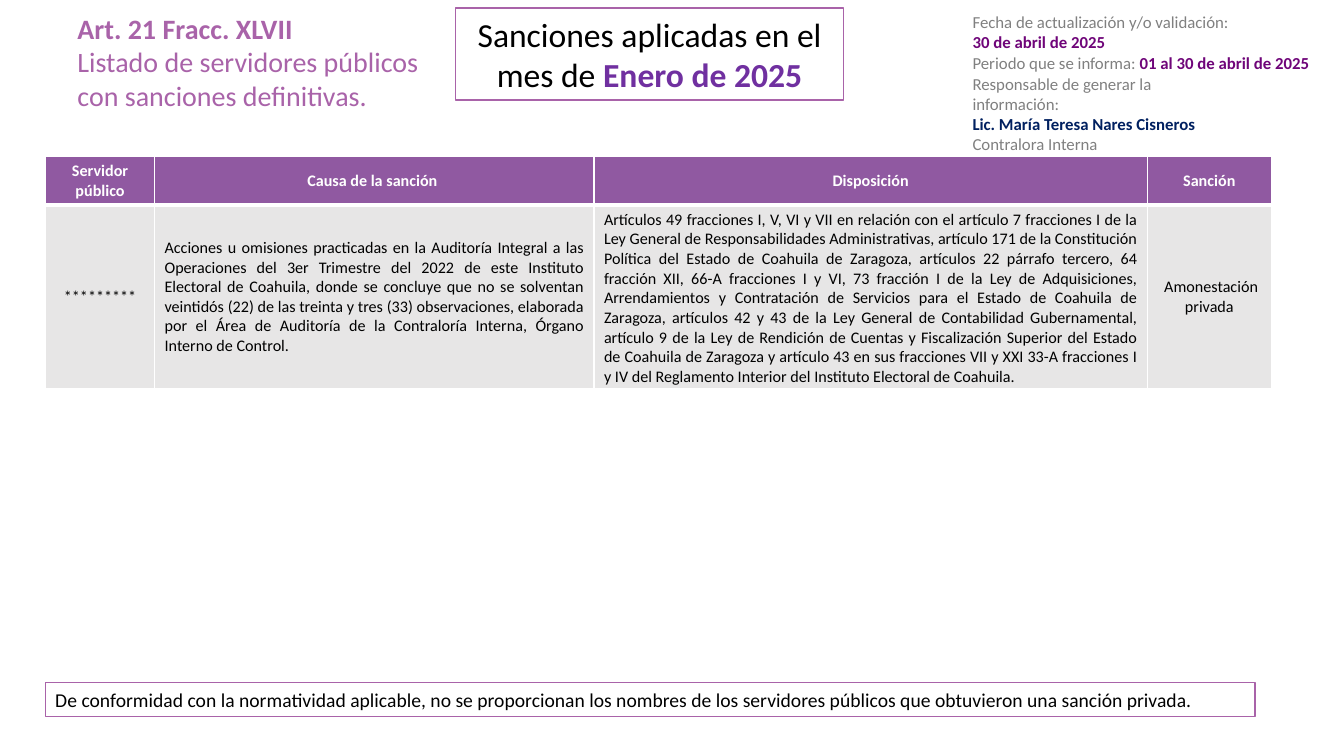
from dataclasses import dataclass

from lxml.etree import SubElement
from pptx import Presentation
from pptx.dml.color import RGBColor
from pptx.enum.shapes import MSO_SHAPE
from pptx.enum.text import MSO_ANCHOR, PP_ALIGN
from pptx.oxml.ns import qn
from pptx.util import Pt


@dataclass(frozen=True)
class Theme:
    font: str = "Calibri"
    white: str = "FFFFFF"
    black: str = "000000"
    gray: str = "808080"
    lilac: str = "A963A9"
    violet: str = "7030A0"
    plum: str = "6F0579"
    navy: str = "002060"
    header: str = "9059A1"
    body: str = "E7E6E6"
    title: float = 24
    article: float = 20
    notice: float = 14
    details: float = 12
    table: float = 11.5


THEME = Theme()

COLUMN_WIDTHS = [77.8, 313.9, 395.3, 88.5]
HEADINGS = ["Servidor público", "Causa de la sanción ", "Disposición", "Sanción"]
SANCTION = [
    "*********",
    "Acciones u omisiones practicadas en la Auditoría Integral a las Operaciones del 3er "
    "Trimestre del 2022 de este Instituto Electoral de Coahuila, donde se concluye que no se "
    "solventan veintidós (22) de las treinta y tres (33) observaciones, elaborada por el Área "
    "de Auditoría de la Contraloría Interna, Órgano Interno de Control.",
    "Artículos 49 fracciones I, V, VI y VII en relación con el artículo 7 fracciones I de la "
    "Ley General de Responsabilidades Administrativas, artículo 171 de la Constitución Política "
    "del Estado de Coahuila de Zaragoza, artículos 22 párrafo tercero, 64 fracción XII, 66-A "
    "fracciones I y VI, 73 fracción I de la Ley de Adquisiciones, Arrendamientos y Contratación "
    "de Servicios para el Estado de Coahuila de Zaragoza, artículos 42 y 43 de la Ley General "
    "de Contabilidad Gubernamental, artículo 9 de la Ley de Rendición de Cuentas y "
    "Fiscalización Superior del Estado de Coahuila de Zaragoza y artículo 43 en sus fracciones "
    "VII y XXI 33-A fracciones I y IV del Reglamento Interior del Instituto Electoral de "
    "Coahuila.",
    " Amonestación privada",
]


def rgb(color):
    return RGBColor.from_string(color)


def write(frame, paragraphs, *, size, align=PP_ALIGN.LEFT):
    """Fill a text frame; each paragraph is a list of (text, color, bold) runs."""
    for index, runs in enumerate(paragraphs):
        paragraph = frame.paragraphs[0] if index == 0 else frame.add_paragraph()
        paragraph.alignment = align
        for text, color, bold in runs:
            run = paragraph.add_run()
            run.text = text
            run.font.name = THEME.font
            run.font.size = Pt(size)
            run.font.bold = bold
            run.font.color.rgb = rgb(color)


def add_text(slide, bounds, paragraphs, *, size, wrap=True):
    frame = slide.shapes.add_textbox(*map(Pt, bounds)).text_frame
    frame.word_wrap = wrap
    write(frame, paragraphs, size=size)


def add_framed_text(slide, bounds, runs, *, size, align=PP_ALIGN.LEFT):
    box = slide.shapes.add_shape(MSO_SHAPE.RECTANGLE, *map(Pt, bounds))
    box.shadow.inherit = False
    box.fill.solid()
    box.fill.fore_color.rgb = rgb(THEME.white)
    box.line.color.rgb = rgb(THEME.lilac)
    box.line.width = Pt(1)
    box.text_frame.word_wrap = True
    write(box.text_frame, [runs], size=size, align=align)


def set_borders(cell, **widths):
    """Draw white borders; keywords L, R, T and B give widths in points."""
    properties = cell._tc.get_or_add_tcPr()
    for side, width in widths.items():
        line = SubElement(properties, qn(f"a:ln{side}"), w=str(Pt(width)))
        fill = SubElement(line, qn("a:solidFill"))
        SubElement(fill, qn("a:srgbClr"), val=THEME.white)


def fill_cell(cell, text, *, fill, color, bold, align, top, bottom):
    set_borders(cell, L=1, R=1, T=top, B=bottom)
    cell.fill.solid()
    cell.fill.fore_color.rgb = rgb(fill)
    cell.vertical_anchor = MSO_ANCHOR.MIDDLE
    write(cell.text_frame, [[(text, color, bold)]], size=THEME.table, align=align)


def add_sanctions_table(slide):
    heights = [34.8, 131]
    table = slide.shapes.add_table(
        2, 4, Pt(32.6), Pt(111.6), Pt(sum(COLUMN_WIDTHS)), Pt(sum(heights))
    ).table
    for row, height in zip(table.rows, heights):
        row.height = Pt(height)
    for index, width in enumerate(COLUMN_WIDTHS):
        table.columns[index].width = Pt(width)
        fill_cell(table.cell(0, index), HEADINGS[index], fill=THEME.header,
                  color=THEME.white, bold=True, align=PP_ALIGN.CENTER, top=1, bottom=3)
        align = PP_ALIGN.JUSTIFY if index in (1, 2) else PP_ALIGN.CENTER
        fill_cell(table.cell(1, index), SANCTION[index], fill=THEME.body,
                  color=THEME.black, bold=False, align=align, top=3, bottom=1)


def main():
    deck = Presentation()
    deck.slide_width, deck.slide_height = Pt(960), Pt(540)
    slide = deck.slides.add_slide(deck.slide_layouts[6])

    add_text(slide, (48.2, 4.3, 277.2, 104.4), [
        [("Art. 21 Fracc. XLVII", THEME.lilac, True)],
        [("Listado de servidores públicos con sanciones definitivas.", THEME.lilac, False)],
    ], size=THEME.article)
    add_framed_text(slide, (32.4, 487.4, 864, 24.5), [
        ("De conformidad con la normatividad aplicable, no se proporcionan los nombres de los "
         "servidores públicos que obtuvieron una sanción privada.", THEME.black, False),
    ], size=THEME.notice)
    add_sanctions_table(slide)
    add_framed_text(slide, (325.4, 5.8, 277.2, 65.5), [
        ("Sanciones aplicadas en el mes de ", THEME.black, False),
        ("Enero de 2025", THEME.violet, True),
    ], size=THEME.title, align=PP_ALIGN.CENTER)
    add_text(slide, (687.6, 5, 258.5, 65.5), [
        [("Fecha de actualización y/o validación:", THEME.gray, False)],
        [("30 de abril de 2025", THEME.plum, True)],
        [("Periodo que se informa: ", THEME.gray, False),
         ("01 al 30 de abril de 2025", THEME.plum, True)],
    ], size=THEME.details, wrap=False)
    add_text(slide, (687.6, 49, 190.8, 114.5), [
        [("Responsable de generar la información:", THEME.gray, False)],
        [("Lic. María Teresa Nares Cisneros", THEME.navy, True)],
        [("Contralora Interna", THEME.gray, False)],
    ], size=THEME.details)

    deck.save("out.pptx")


if __name__ == "__main__":
    main()
